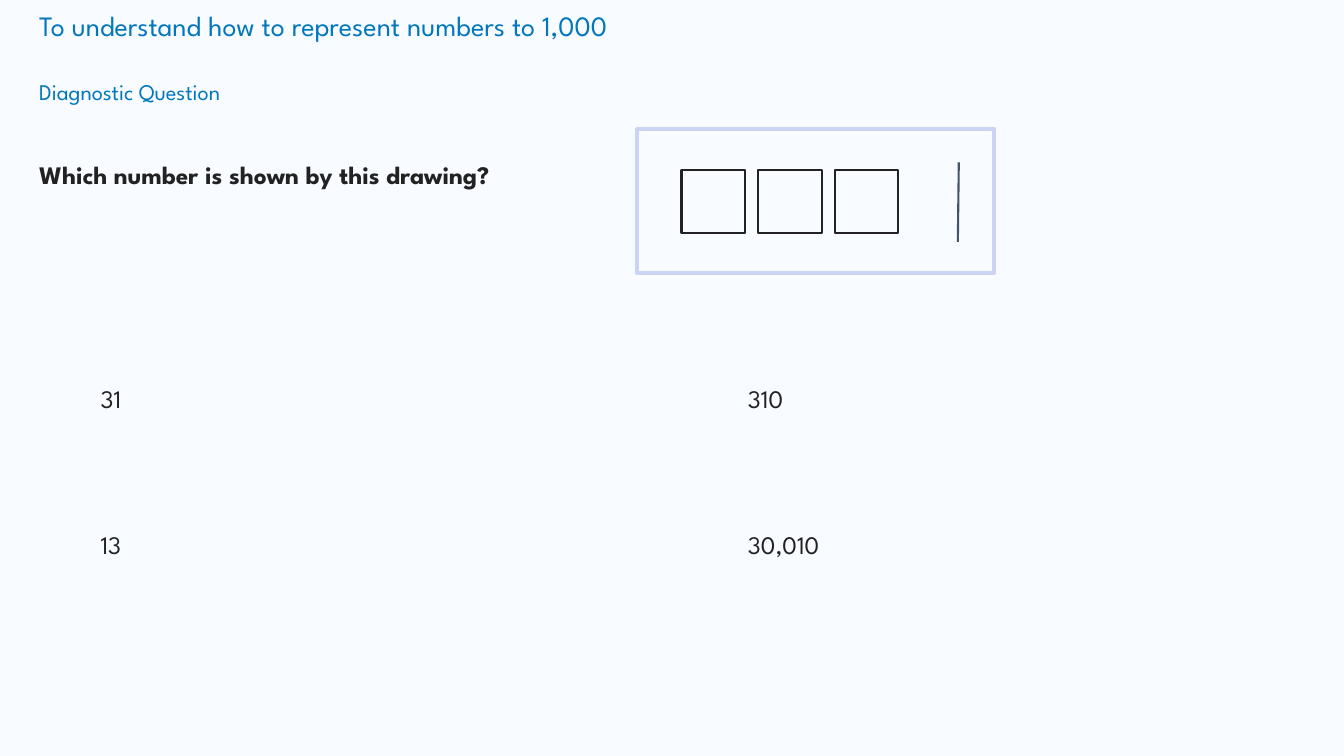
from pptx import Presentation
from pptx.dml.color import RGBColor
from pptx.enum.shapes import MSO_CONNECTOR, MSO_SHAPE
from pptx.oxml.ns import qn
from pptx.util import Inches, Pt

RECTANGLE = MSO_SHAPE.RECTANGLE
STRAIGHT = MSO_CONNECTOR.STRAIGHT

PAPER = RGBColor(0xF8, 0xFB, 0xFF)
BLUE = RGBColor(0x02, 0x77, 0xBD)
INK = RGBColor(0x22, 0x22, 0x22)
LAVENDER = RGBColor(0xCC, 0xD4, 0xF4)
SLATE = RGBColor(0x44, 0x54, 0x6A)

# Positions and sizes are percentages of the slide's width and height.
MARGIN = 2.18
ANSWER_COLUMNS = (6.75, 54.91)
ANSWER_ROWS = (50.53, 69.87)
ANSWERS = (("31", "310"), ("13", "30,010"))
HUNDREDS = 3
HUNDRED_LEFT, HUNDRED_PITCH = 50.71, 5.7


class QuestionSlide:
    font_name = "League Spartan"

    def __init__(self, deck):
        self.width, self.height = deck.slide_width, deck.slide_height
        self.slide = deck.slides.add_slide(deck.slide_layouts[6])
        background = self.slide.background.fill
        background.solid()
        background.fore_color.rgb = PAPER

    def place(self, x, y, *more):
        """Turn alternating horizontal and vertical percentages into lengths."""
        sides = (self.width, self.height)
        return [round(sides[i % 2] * share / 100)
                for i, share in enumerate((x, y, *more))]

    def text(self, wording, area, color=INK, spacing=None, **font_format):
        box = self.slide.shapes.add_textbox(*self.place(*area))
        box.text_frame.word_wrap = True
        paragraph = box.text_frame.paragraphs[0]
        paragraph.line_spacing = spacing
        run = paragraph.add_run()
        run.text = wording
        style = {"name": self.font_name, "size": Pt(18), **font_format}
        for attribute, value in style.items():
            setattr(run.font, attribute, value)
        run.font.color.rgb = color

    def outline(self, area, color, weight):
        frame = self.slide.shapes.add_shape(RECTANGLE, *self.place(*area))
        frame.shadow.inherit = False
        frame.fill.background()
        frame.line.color.rgb = color
        frame.line.width = Pt(weight)

    def stroke(self, ends, color, weight):
        line = self.slide.shapes.add_connector(STRAIGHT, *self.place(*ends))
        line.line.color.rgb = color
        line.line.width = Pt(weight)
        properties = line.element.spPr
        properties.append(properties.makeelement(qn("a:effectLst"), {}))


def main():
    deck = Presentation()
    deck.slide_width, deck.slide_height = Inches(13.33), Inches(7.5)
    question = QuestionSlide(deck)

    question.text("To understand how to represent numbers to 1,000",
                  (MARGIN, 0.53, 92.57, 5.87), BLUE, size=Pt(20))
    question.text("Diagnostic Question",
                  (MARGIN, 9.73, 25.81, 4.93), BLUE, size=Pt(16))
    question.text("Which number is shown by this drawing?",
                  (MARGIN, 18.8, 96.32, 6.93), spacing=1.4, bold=True)

    for top, answer_row in zip(ANSWER_ROWS, ANSWERS):
        for left, answer in zip(ANSWER_COLUMNS, answer_row):
            question.text(answer, (left, top, 42.54, 4.93), spacing=0.9)

    question.outline((47.41, 17.07, 26.56, 19.07), LAVENDER, 3)
    for index in range(HUNDREDS):
        left = HUNDRED_LEFT + index * HUNDRED_PITCH
        question.outline((left, 22.53, 4.73, 8.27), INK, 1.5)
    question.stroke((71.34, 21.47, 71.27, 32), SLATE, 1.5)

    deck.save("out.pptx")


if __name__ == "__main__":
    main()
